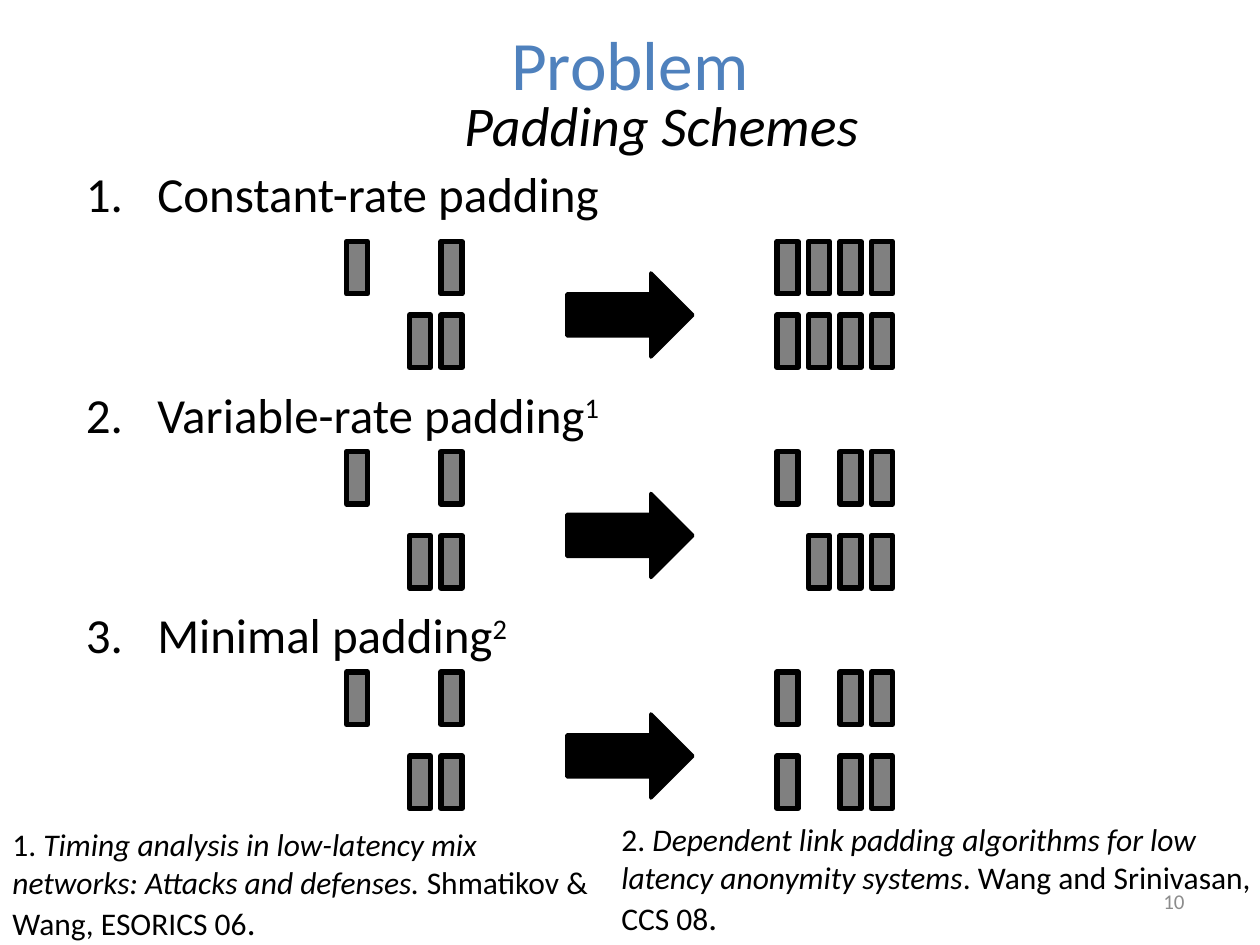
from dataclasses import dataclass

from lxml.etree import SubElement
from pptx import Presentation
from pptx.dml.color import RGBColor
from pptx.enum.shapes import MSO_SHAPE as SHAPE
from pptx.enum.text import MSO_ANCHOR as ANCHOR, MSO_AUTO_SIZE as AUTO, PP_ALIGN as ALIGN
from pptx.oxml.ns import qn
from pptx.util import Emu, Pt


@dataclass(frozen=True)
class Theme:
    font: str = "Calibri"
    ink: RGBColor = RGBColor(0, 0, 0)
    accent: RGBColor = RGBColor(0x4F, 0x81, 0xBD)
    packet: RGBColor = RGBColor(0x80, 0x80, 0x80)
    muted: RGBColor = RGBColor(0x8C, 0x8C, 0x8C)
    title: float = 39.6
    subtitle: int = 32
    heading: int = 28
    note: int = 18
    note_end: int = 20
    number: int = 12
    packet_line: int = 3
    arrow_line: int = 2


THEME = Theme()
ARRIVALS = ("x..x", "..xx")
# heading, footnote mark, first packet row offset, padded packet rows
SCHEMES = [
    ("Constant-rate padding", "", 80, ("xxxx", "xxxx")),
    ("Variable-rate padding", "1", 70, ("x.xx", ".xxx")),
    ("Minimal padding", "2", 70, ("x.xx", "x.xx")),
]


def px(n):
    """Convert px, 120 to the inch, to EMU."""
    return Emu(n * 7620)


def add_text(slide, box, size, color=THEME.ink, align=ALIGN.LEFT, anchor=ANCHOR.TOP, grow=True):
    """Add a text box and return its empty, styled paragraph."""
    tf = slide.shapes.add_textbox(*map(px, box)).text_frame
    tf.word_wrap = True
    tf.auto_size = AUTO.SHAPE_TO_FIT_TEXT if grow else AUTO.NONE
    tf.vertical_anchor = anchor
    p = tf.paragraphs[0]
    p.alignment = align
    p.font.name, p.font.size, p.font.color.rgb = THEME.font, Pt(size), color
    return p


def add_run(p, text):
    r = p.add_run()
    r.text = text
    return r


def add_solid(slide, kind, box, fill, line_width):
    s = slide.shapes.add_shape(kind, *map(px, box))
    s.shadow.inherit = False
    s.fill.solid()
    s.fill.fore_color.rgb = fill
    s.line.color.rgb = THEME.ink
    s.line.width = Pt(line_width)


def add_header(slide, x, y, w):
    p = add_text(slide, (x, y, w, 80), THEME.title, THEME.accent, ALIGN.CENTER, ANCHOR.MIDDLE, False)
    add_run(p, "Problem")
    p = add_text(slide, (x + 90, y + 60, w - 120, 142), THEME.subtitle, align=ALIGN.CENTER)
    p.font.italic = True
    add_run(p, "Padding Schemes")


def add_heading(slide, box, number, text, mark):
    p = add_text(slide, box, THEME.heading)
    pPr = p._p.get_or_add_pPr()
    pPr.set("marL", str(px(68)))
    pPr.set("indent", str(px(-68)))
    bullet = pPr.makeelement(qn("a:buAutoNum"), {"type": "arabicPeriod", "startAt": str(number)})
    pPr.insert(0, bullet)
    add_run(p, text)
    if mark:
        add_run(p, mark).font._element.set("baseline", "30000")


def add_packets(slide, x, y, row):
    """Draw a packet in each time slot marked x."""
    for slot, sign in enumerate(row):
        if sign == "x":
            add_solid(slide, SHAPE.RECTANGLE, (x + 30 * slot, y, 20, 50), THEME.packet, THEME.packet_line)


def add_scheme(slide, x, y, number, heading, mark, first_row, padded):
    add_heading(slide, (x, y, 1130, 68), number, heading, mark)
    for arrived, sent, dy in zip(ARRIVALS, padded, (first_row, 150)):
        add_packets(slide, x + 260, y + dy, arrived)
        add_packets(slide, x + 670, y + dy, sent)
    add_solid(slide, SHAPE.RIGHT_ARROW, (x + 470, y + 110, 120, 80), THEME.ink, THEME.arrow_line)


def add_footnote(slide, box, mark, work, source):
    p = add_text(slide, box, THEME.note)
    add_run(p, mark)
    add_run(p, work).font.italic = True
    add_run(p, source)
    add_run(p, ".").font.size = Pt(THEME.note_end)


def add_page_number(slide, box, number):
    p = add_text(slide, box, THEME.number, THEME.muted, ALIGN.RIGHT, ANCHOR.MIDDLE, False)
    add_run(p, str(number))


def main():
    prs = Presentation()
    prs.slide_width, prs.slide_height = px(1200), px(900)
    slide = prs.slides.add_slide(prs.slide_layouts[6])
    add_header(slide, 60, 20, 1080)
    for i, scheme in enumerate(SCHEMES):
        add_scheme(slide, 70, 150 + 210 * i, i + 1, *scheme)
    add_footnote(slide, (0, 780, 590, 125), "1. ",
                 "Timing analysis in low-latency mix networks: Attacks and defenses. ",
                 "Shmatikov & Wang, ESORICS 06")
    add_footnote(slide, (580, 775, 660, 125), "2. ",
                 "Dependent link padding algorithms for low latency anonymity systems",
                 ". Wang and Srinivasan, CCS 08")
    add_page_number(slide, (860, 834, 280, 48), 10)
    prs.save("out.pptx")


if __name__ == "__main__":
    main()
